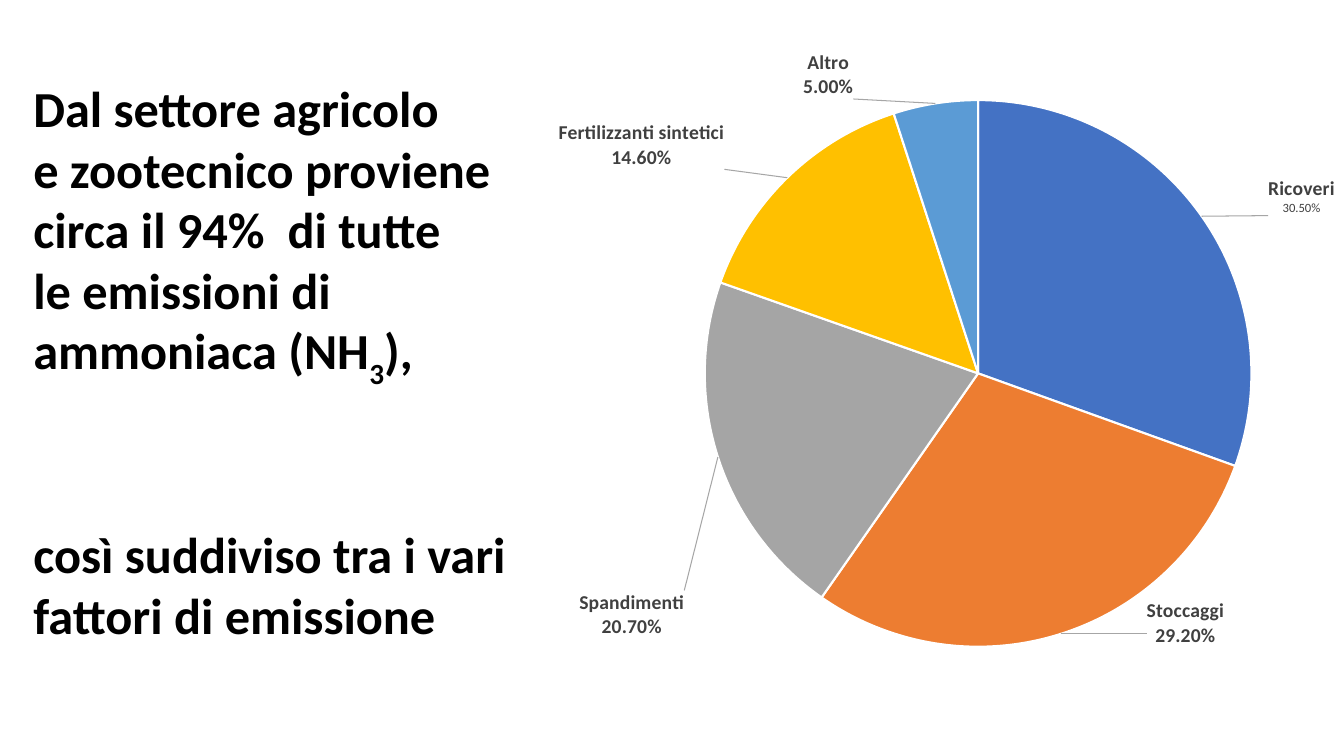
from dataclasses import dataclass

from lxml.etree import SubElement
from pptx import Presentation
from pptx.chart.data import CategoryChartData
from pptx.chart.point import Point
from pptx.dml.color import RGBColor
from pptx.dml.fill import FillFormat
from pptx.enum.chart import XL_CHART_TYPE, XL_LABEL_POSITION
from pptx.enum.text import MSO_ANCHOR, MSO_AUTO_SIZE, PP_ALIGN
from pptx.oxml import parse_xml
from pptx.oxml.ns import nsdecls, qn
from pptx.slide import Slide
from pptx.text.text import Font
from pptx.util import Pt

FONT = "Calibri"
CHART_LEFT, CHART_TOP, CHART_WIDTH, CHART_HEIGHT = 329.76, 23.76, 680.4, 482.4
PIE_LEFT, PIE_TOP, PIE_SIZE = 503.5, 71.5, 390.5


@dataclass(frozen=True)
class Emission:
    source: str
    share: float
    color: str
    shift_x: float
    shift_y: float
    share_size: float = 14
    share_bold: bool = True


EMISSIONS = [
    Emission("Ricoveri", 0.305, "4472C4", 44, 2, 9, False),
    Emission("Stoccaggi", 0.292, "ED7D31", 60, -29),
    Emission("Spandimenti", 0.207, "A5A5A5", -20, 94),
    Emission("Fertilizzanti sintetici", 0.146, "FFC000", -42, -3),
    Emission("Altro", 0.05, "5B9BD5", -58, 1),
]


def paint(fill: FillFormat, color: str) -> None:
    fill.solid()
    fill.fore_color.rgb = RGBColor.from_string(color)


def style(font: Font, size: float, bold: bool, color: str) -> None:
    font.name = FONT
    font.size = Pt(size)
    font.bold = bold
    paint(font.fill, color)


def add_layout(parent, position: int, values: dict[str, object]) -> None:
    layout = parse_xml(f"<c:layout {nsdecls('c')}><c:manualLayout/></c:layout>")
    for tag, value in values.items():
        SubElement(layout[0], qn(f"c:{tag}")).set("val", str(value))
    parent.insert(position, layout)


def add_statement(slide: Slide) -> None:
    statement = slide.shapes.title
    statement.left, statement.top = Pt(16.56), Pt(97.92)
    statement.width, statement.height = Pt(380.88), Pt(334.08)
    frame = statement.text_frame
    frame.word_wrap = True
    frame.vertical_anchor = MSO_ANCHOR.MIDDLE
    frame.auto_size = MSO_AUTO_SIZE.SHAPE_TO_FIT_TEXT
    frame.margin_bottom = Pt(18)
    frame.text = "\n".join([
        "Dal settore agricolo",
        "e zootecnico proviene circa il 94%  di tutte",
        "le emissioni di ammoniaca (NH",
        "così suddiviso tra i vari fattori di emissione",
    ])
    for paragraph in frame.paragraphs:
        paragraph.alignment = PP_ALIGN.LEFT
        paragraph.line_spacing = 1.0
        paragraph.space_before = Pt(0)
        style(paragraph.font, 36, True, "000000")
    ammonia, breakdown = frame.paragraphs[2:]
    subscript = ammonia.add_run()
    subscript.text = "3"
    subscript.font._element.set("baseline", "-30000")
    ammonia.add_run().text = "),"
    breakdown.space_before = Pt(95)


def label_slice(point: Point, emission: Emission) -> None:
    paint(point.format.fill, emission.color)
    paint(point.format.line.fill, "FFFFFF")
    point.format.line.width = Pt(1.5)
    label = point.data_label
    frame = label.text_frame
    frame.text = f"{emission.source}\n{emission.share:.2%}"
    name, share = frame.paragraphs
    style(name.runs[0].font, 14, True, "404040")
    style(share.runs[0].font, emission.share_size, emission.share_bold, "404040")
    label.position = XL_LABEL_POSITION.OUTSIDE_END
    add_layout(label._dLbl, 1, {
        "x": round(emission.shift_x / CHART_WIDTH, 4),
        "y": round(emission.shift_y / CHART_HEIGHT, 4),
    })


def add_pie(slide: Slide) -> None:
    data = CategoryChartData(number_format="0.00%")
    data.categories = [emission.source for emission in EMISSIONS]
    data.add_series("Emissioni", [emission.share for emission in EMISSIONS])
    chart = slide.shapes.add_chart(
        XL_CHART_TYPE.PIE, Pt(CHART_LEFT), Pt(CHART_TOP),
        Pt(CHART_WIDTH), Pt(CHART_HEIGHT), data).chart
    chart.has_legend = False
    chart.has_title = False
    style(chart.font, 10, False, "000000")
    plot = chart.plots[0]
    plot.vary_by_categories = True
    shares = plot.series[0]
    labels = shares.data_labels
    labels.show_value = True
    labels.number_format = "0.00%"
    labels.number_format_is_linked = False
    labels.position = XL_LABEL_POSITION.OUTSIDE_END
    style(labels.font, 9, False, "404040")
    for index, emission in enumerate(EMISSIONS):
        label_slice(shares.points[index], emission)
    labels._element.append(parse_xml(
        f'<c:leaderLines {nsdecls("c", "a")}><c:spPr><a:ln w="9525"><a:solidFill>'
        '<a:srgbClr val="A6A6A6"/></a:solidFill></a:ln></c:spPr></c:leaderLines>'))
    plot_area = chart._chartSpace.chart.plotArea
    for layout in plot_area.findall(qn("c:layout")):
        plot_area.remove(layout)
    add_layout(plot_area, 0, {
        "layoutTarget": "inner", "xMode": "edge", "yMode": "edge",
        "x": round((PIE_LEFT - CHART_LEFT) / CHART_WIDTH, 4),
        "y": round((PIE_TOP - CHART_TOP) / CHART_HEIGHT, 4),
        "w": round(PIE_SIZE / CHART_WIDTH, 4),
        "h": round(PIE_SIZE / CHART_HEIGHT, 4),
    })


def main() -> None:
    """Build the slide on ammonia emissions by source."""
    presentation = Presentation()
    presentation.slide_width, presentation.slide_height = Pt(960), Pt(540)
    slide = presentation.slides.add_slide(presentation.slide_layouts[5])
    add_statement(slide)
    add_pie(slide)
    presentation.save("out.pptx")


if __name__ == "__main__":
    main()
